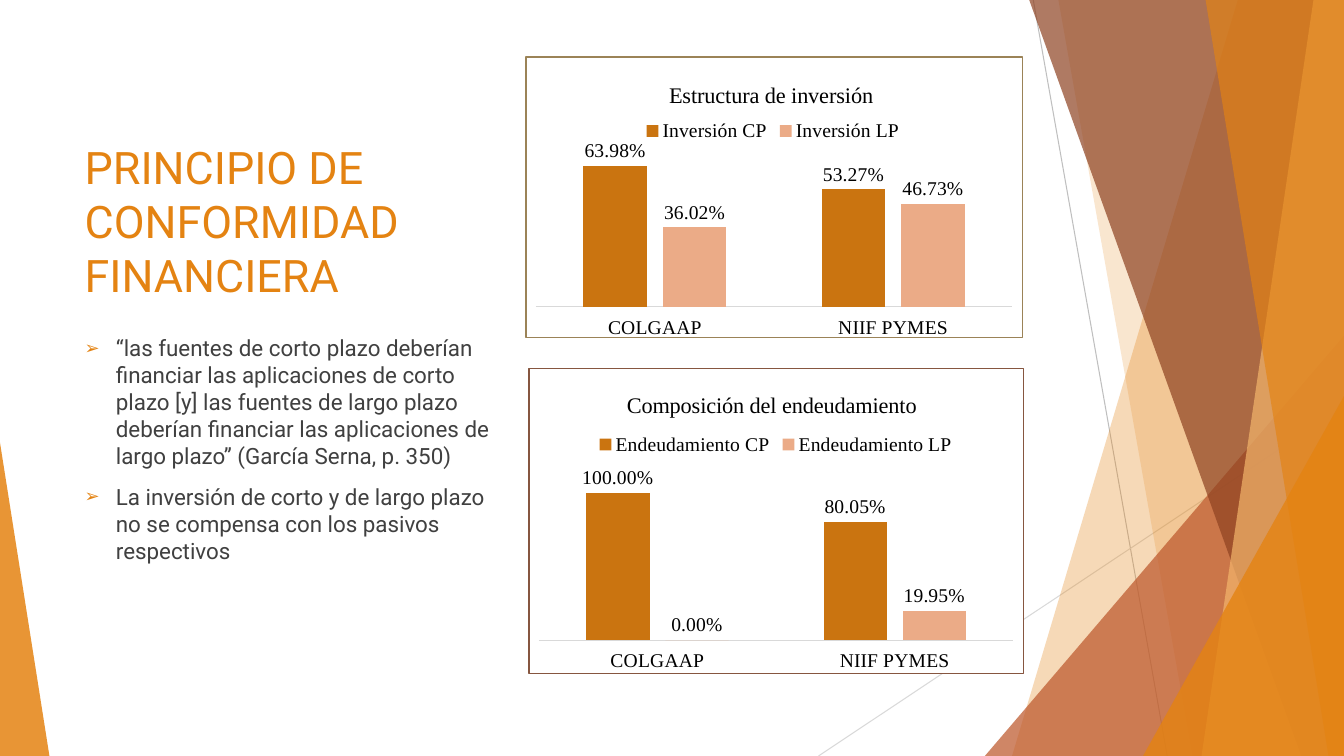
from dataclasses import dataclass

from lxml import etree
from pptx import Presentation
from pptx.chart.data import CategoryChartData
from pptx.dml.color import RGBColor
from pptx.enum.chart import XL_CHART_TYPE, XL_LABEL_POSITION, XL_LEGEND_POSITION, XL_TICK_LABEL_POSITION, XL_TICK_MARK
from pptx.enum.shapes import MSO_CONNECTOR, MSO_SHAPE
from pptx.enum.text import MSO_ANCHOR, MSO_AUTO_SIZE, PP_ALIGN
from pptx.oxml import parse_xml
from pptx.oxml.ns import nsdecls, qn
from pptx.util import Inches, Pt

COLUMN_CLUSTERED = XL_CHART_TYPE.COLUMN_CLUSTERED
OUTSIDE_END = XL_LABEL_POSITION.OUTSIDE_END
LEGEND_TOP = XL_LEGEND_POSITION.TOP
NO_TICK = XL_TICK_MARK.NONE
LOW = XL_TICK_LABEL_POSITION.LOW
STRAIGHT = MSO_CONNECTOR.STRAIGHT
TRIANGLE = MSO_SHAPE.ISOSCELES_TRIANGLE
BOTTOM, MIDDLE = MSO_ANCHOR.BOTTOM, MSO_ANCHOR.MIDDLE
NO_AUTOFIT = MSO_AUTO_SIZE.NONE
LEFT = PP_ALIGN.LEFT

ORANGE = RGBColor(0xE4, 0x83, 0x12)
RUST = RGBColor(0xBD, 0x58, 0x2C)
BROWN = RGBColor(0x8E, 0x42, 0x21)
SAND = RGBColor(0xF3, 0xB5, 0x6C)
DARK_GRAY = RGBColor(0x40, 0x40, 0x40)
GRAY = RGBColor(0xBF, 0xBF, 0xBF)
LIGHT_GRAY = RGBColor(0xD9, 0xD9, 0xD9)
BLACK = RGBColor(0, 0, 0)
SHORT_TERM = RGBColor(0xCA, 0x74, 0x10)
LONG_TERM = RGBColor(0xEB, 0xAB, 0x87)
OLIVE_BORDER = RGBColor(0x9B, 0x83, 0x57)
BROWN_BORDER = RGBColor(0x86, 0x56, 0x40)

WIDTH, HEIGHT = Inches(13.33), Inches(7.5)
SANS, SERIF = "Roboto", "Times New Roman"
PERCENT = "0.00%"
CATEGORIES = ["COLGAAP", "NIIF PYMES"]


@dataclass(frozen=True)
class Area:
    left: float
    top: float
    width: float
    height: float

    def emu(self) -> tuple[int, int, int, int]:
        return across(self.left), down(self.top), across(self.width), down(self.height)


@dataclass(frozen=True)
class Band:
    top_left: float
    bottom_left: float
    color: RGBColor
    opacity: int


@dataclass(frozen=True)
class Wedge:
    area: Area
    peak: int
    color: RGBColor
    opacity: int


@dataclass(frozen=True)
class Ray:
    start: tuple[float, float]
    end: tuple[float, float]
    color: RGBColor


@dataclass(frozen=True)
class ColumnChart:
    title: str
    area: Area
    series: dict[str, tuple[float, float]]
    maximum: float
    border: RGBColor
    title_at: tuple[float, float]
    legend_at: tuple[float, float]
    plot_at: tuple[float, float, float, float]


RAYS = [
    Ray((76.88, 0), (86.85, 100), GRAY),
    Ray((100, 53.73), (60.9, 100), LIGHT_GRAY),
]
DECORATIONS = [
    Band(92.1, 75.3, ORANGE, 30),
    Band(78.75, 88.73, ORANGE, 20),
    Wedge(Area(73.28, 44.4, 26.72, 55.6), 1, RUST, 72),
    Band(76.58, 96.83, BROWN, 70),
    Band(97.73, 89.4, SAND, 70),
    Band(89.7, 98.85, ORANGE, 65),
    Wedge(Area(85.05, 52.4, 14.95, 47.6), 1, ORANGE, 80),
    Wedge(Area(0, 58.53, 3.68, 41.47), 0, ORANGE, 85),
]
TITLE_AREA = Area(5.55, 21.87, 31.65, 18.67)
BODY_AREA = Area(5.55, 40.53, 31.65, 37.73)
POINTS = [
    "“las fuentes de corto plazo deberían financiar las aplicaciones de corto plazo [y] las fuentes "
    "de largo plazo deberían financiar las aplicaciones de largo plazo” (García Serna, p. 350)",
    "La inversión de corto y de largo plazo no se compensa con los pasivos respectivos",
]
CHARTS = [
    ColumnChart("Estructura de inversión", Area(39.08, 7.47, 37.05, 37.33),
                {"Inversión CP": (0.6398, 0.5327), "Inversión LP": (0.3602, 0.4673)},
                0.7, OLIVE_BORDER, (0.28, 0.07), (0.23, 0.21), (0.02, 0.34, 0.96, 0.55)),
    ColumnChart("Composición del endeudamiento", Area(39.3, 48.67, 36.9, 40.53),
                {"Endeudamiento CP": (1, 0.8005), "Endeudamiento LP": (0, 0.1995)},
                1.2, BROWN_BORDER, (0.19, 0.06), (0.13, 0.2), (0.02, 0.31, 0.96, 0.58)),
]


def across(share: float) -> int:
    return round(WIDTH * share / 100)


def down(share: float) -> int:
    return round(HEIGHT * share / 100)


def format_font(font, *, name: str, size: float, color: RGBColor) -> None:
    font.name, font.size, font.bold = name, Pt(size), False
    font.color.rgb = color


def write(para, text: str, **style) -> None:
    span = para.add_run()
    span.text = text
    format_font(span.font, **style)


def draw_ray(page, ray: Ray) -> None:
    (x1, y1), (x2, y2) = ray.start, ray.end
    line = page.shapes.add_connector(STRAIGHT, across(x1), down(y1), across(x2), down(y2))
    line.line.color.rgb = ray.color
    line.line.width = Pt(0.75)
    etree.SubElement(line._element.spPr, qn("a:effectLst"))


def draw_decoration(page, item: Band | Wedge) -> None:
    if isinstance(item, Band):
        outline = page.shapes.build_freeform(across(item.top_left), 0)
        outline.add_line_segments([(WIDTH, 0), (WIDTH, HEIGHT), (across(item.bottom_left), HEIGHT)])
        shape = outline.convert_to_shape()
    else:
        shape = page.shapes.add_shape(TRIANGLE, *item.area.emu())
        shape.adjustments[0] = item.peak
    shape.shadow.inherit = False
    shape.line.fill.background()
    shape.fill.solid()
    shape.fill.fore_color.rgb = item.color
    color = shape._element.spPr.find(qn("a:solidFill"))[0]
    etree.SubElement(color, qn("a:alpha"), val=str(item.opacity * 1000))


def place(box, area: Area, anchor) -> None:
    box.left, box.top, box.width, box.height = area.emu()
    frame = box.text_frame
    frame.word_wrap, frame.auto_size, frame.vertical_anchor = True, NO_AUTOFIT, anchor


def add_bullet(para) -> None:
    para.space_before = Pt(10)
    properties = para._p.get_or_add_pPr()
    properties.set("marL", str(Inches(0.31)))
    properties.set("indent", str(-Inches(0.31)))
    color = etree.SubElement(properties, qn("a:buClr"))
    etree.SubElement(color, qn("a:srgbClr"), val=str(ORANGE))
    etree.SubElement(properties, qn("a:buSzPct"), val="80000")
    etree.SubElement(properties, qn("a:buChar"), char="➢")


def set_layout(element, values: tuple[float, ...], inner: bool = False) -> None:
    for old in element.findall(qn("c:layout")):
        element.remove(old)
    target = '<c:layoutTarget val="inner"/>' if inner else ""
    modes = '<c:xMode val="edge"/><c:yMode val="edge"/>'
    sizes = "".join(f'<c:{key} val="{value}"/>' for key, value in zip("xywh", values))
    layout = parse_xml(f'<c:layout {nsdecls("c")}><c:manualLayout>{target}{modes}{sizes}</c:manualLayout></c:layout>')
    before = element.find(qn("c:tx")) if element.tag == qn("c:title") else element.find(qn("c:legendPos"))
    element.insert(0 if before is None else element.index(before) + 1, layout)


def draw_chart(page, item: ColumnChart) -> None:
    data = CategoryChartData(number_format=PERCENT)
    data.categories = CATEGORIES
    for name, values in item.series.items():
        data.add_series(name, values)
    chart = page.shapes.add_chart(COLUMN_CLUSTERED, *item.area.emu(), data).chart
    format_font(chart.font, name=SERIF, size=14, color=BLACK)
    chart.has_title = chart.has_legend = True
    write(chart.chart_title.text_frame.paragraphs[0], item.title, name=SERIF, size=16, color=BLACK)
    chart.legend.position = LEGEND_TOP
    chart.legend.include_in_layout = False
    category, value = chart.category_axis, chart.value_axis
    category.major_tick_mark = category.minor_tick_mark = NO_TICK
    category.tick_label_position = LOW
    category.format.line.color.rgb = LIGHT_GRAY
    category.format.line.width = Pt(0.75)
    value.minimum_scale, value.maximum_scale = 0, item.maximum
    value.has_major_gridlines = value.visible = False
    plot = chart.plots[0]
    plot.gap_width, plot.overlap, plot.vary_by_categories = 150, -25, False
    for series, color in zip(plot.series, (SHORT_TERM, LONG_TERM)):
        series.format.fill.solid()
        series.format.fill.fore_color.rgb = color
        labels = series.data_labels
        labels.show_value, labels.position = True, OUTSIDE_END
        labels.number_format, labels.number_format_is_linked = PERCENT, False
        format_font(labels.font, name=SERIF, size=14, color=BLACK)
    set_layout(chart.chart_title._element, item.title_at)
    set_layout(chart.legend._element, item.legend_at)
    space = chart._chartSpace
    set_layout(space.chart.plotArea, item.plot_at, inner=True)
    space.chart.addnext(parse_xml(
        f'<c:spPr {nsdecls("c", "a")}><a:solidFill><a:srgbClr val="FFFFFF"/></a:solidFill>'
        f'<a:ln w="{Pt(1)}"><a:solidFill><a:srgbClr val="{item.border}"/></a:solidFill></a:ln></c:spPr>'))


def main() -> None:
    deck = Presentation()
    deck.slide_width, deck.slide_height = WIDTH, HEIGHT
    page = deck.slides.add_slide(deck.slide_layouts[1])
    for ray in RAYS:
        draw_ray(page, ray)
    for item in DECORATIONS:
        draw_decoration(page, item)
    title, body = page.shapes.title, page.placeholders[1]
    place(title, TITLE_AREA, BOTTOM)
    heading = title.text_frame.paragraphs[0]
    heading.alignment = LEFT
    write(heading, "PRINCIPIO DE CONFORMIDAD FINANCIERA", name=SANS, size=32, color=ORANGE)
    place(body, BODY_AREA, MIDDLE)
    for index, point in enumerate(POINTS):
        para = body.text_frame.add_paragraph() if index else body.text_frame.paragraphs[0]
        add_bullet(para)
        write(para, point, name=SANS, size=16, color=DARK_GRAY)
    for item in CHARTS:
        draw_chart(page, item)
    deck.save("out.pptx")


if __name__ == "__main__":
    main()
